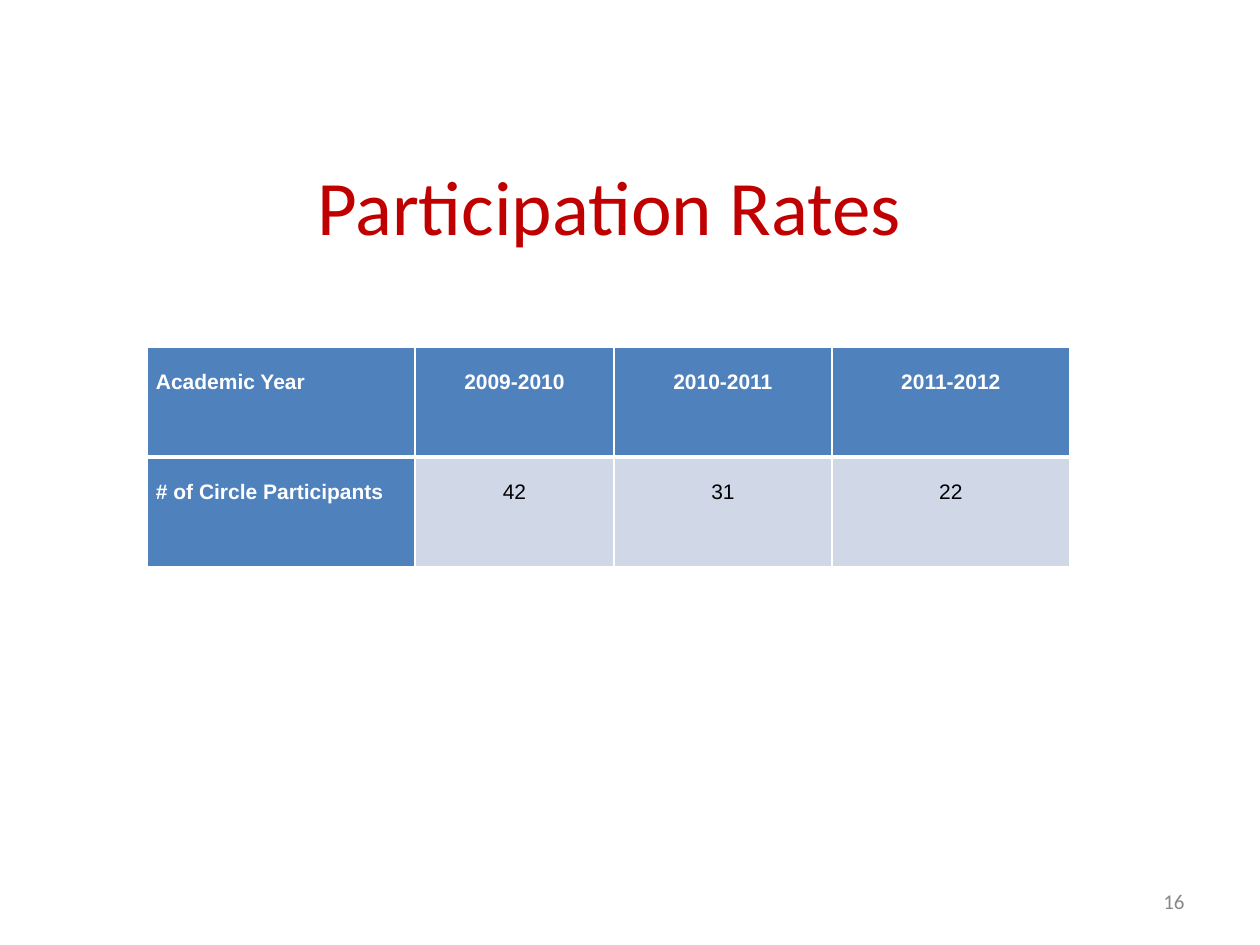
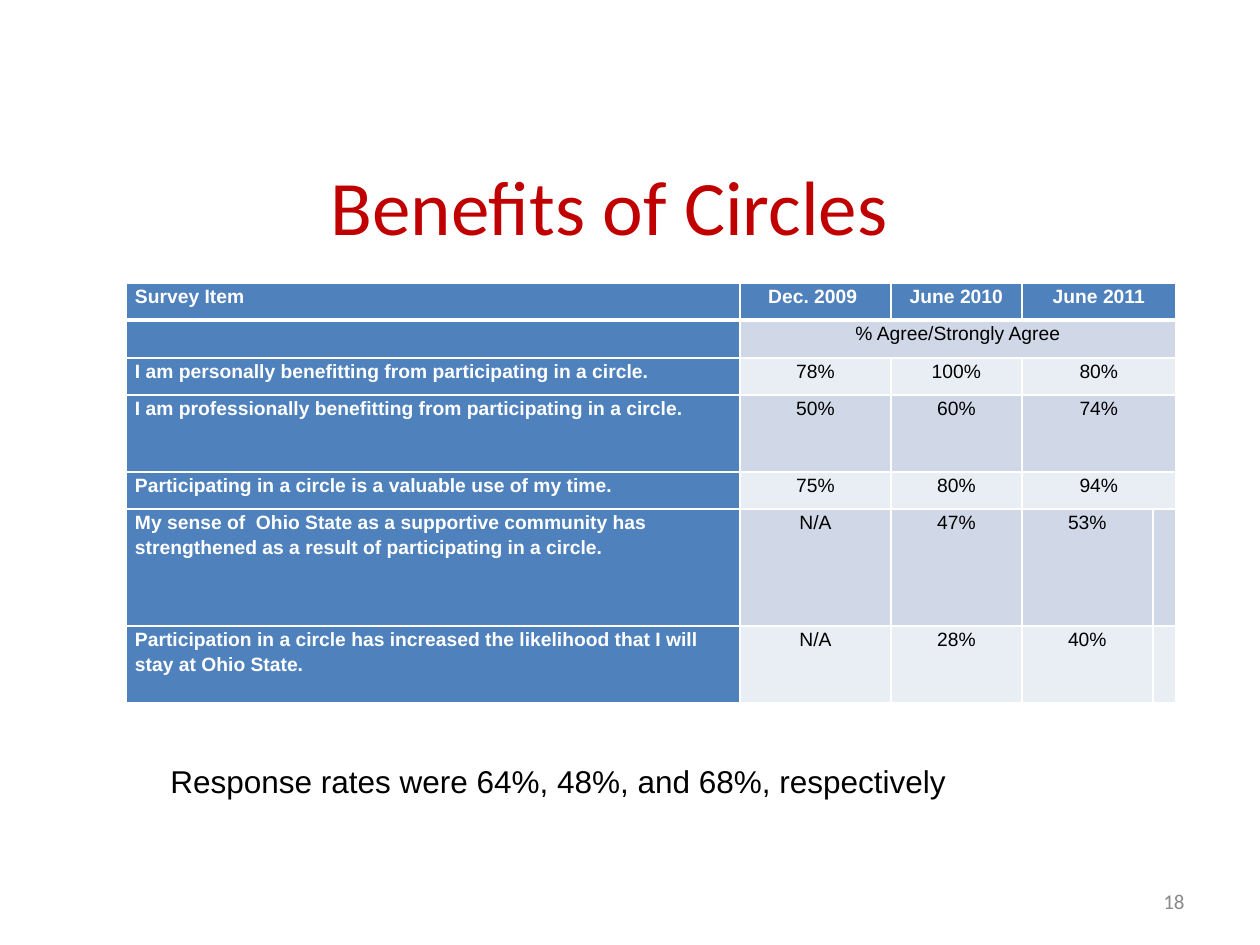
import lxml.etree
import pptx
import pptx.dml.color
import pptx.enum.text
import pptx.oxml.ns
import pptx.util

COLORS = {
    "title": "C00000",
    "header": "4F81BD",
    "band_dark": "D0D8E8",
    "band_light": "E9EDF4",
    "white": "FFFFFF",
    "black": "000000",
    "number": "898989",
}
PAGE_SIZE = (1260, 945)
TITLE_AREA = (116, 168, 987, 73)
NUMBER_AREA = (903, 876, 294, 50)

PAGES = [
    {
        "title": "Participation Rates",
        "number": "16",
        "table": {
            "origin": (147, 347),
            "columns": [268, 199, 218, 238],
            "heights": [110, 110],
            "format": {"size": 12, "line_spacing": 2.0},
            "rows": [
                ["Academic Year", "2009-2010", "2010-2011", "2011-2012"],
                ["# of Circle Participants", "42", "31", "22"],
            ],
        },
    },
    {
        "title": "Benefits of Circles",
        "number": "18",
        "table": {
            "origin": (126, 283),
            "columns": [614, 151, 131, 131, 23],
            "heights": [37, 38, 37, 77, 37, 117, 77],
            "format": {"size": 11, "line_spacing": 1.15, "after": 10},
            "rows": [
                ["Survey Item", "Dec. 2009 ", "June 2010", "June 2011"],
                ["", "% Agree/Strongly Agree"],
                ["I am personally benefitting from participating in a circle.", "78%", "100%", "80%"],
                ["I am professionally benefitting from participating in a circle.", "50%", "60%", "74%"],
                ["Participating in a circle is a valuable use of my time.", "75%", "80%", "94%"],
                ["My sense of  Ohio State as a supportive community has strengthened "
                 "as a result of participating in a circle.", "N/A", "47%", "53%", ""],
                ["Participation in a circle has increased the likelihood that I will "
                 "stay at Ohio State.", "N/A", "28%", "40%", ""],
            ],
        },
        "note": {
            "text": "Response rates were 64%, 48%, and 68%, respectively",
            "area": (158, 756, 808, 50),
        },
    },
]


def px(length):
    return pptx.util.Emu(round(length * 914400 / 126))


def rgb(name):
    return pptx.dml.color.RGBColor.from_string(COLORS[name])


def write(frame, text, size, color="black", font="Arial", bold=False,
          align="LEFT", line_spacing=None, after=None):
    para = frame.paragraphs[0]
    para.alignment = getattr(pptx.enum.text.PP_ALIGN, align)
    if line_spacing:
        para.line_spacing = line_spacing
    if after:
        para.space_after = pptx.util.Pt(after)
    if not text:
        para._p.get_or_add_endParaRPr().set("sz", str(size * 100))
        return
    span = para.add_run()
    span.text = text
    span.font.size = pptx.util.Pt(size)
    span.font.name = font
    span.font.bold = bold
    span.font.color.rgb = rgb(color)


def set_borders(cell, widths):
    properties = cell._tc.get_or_add_tcPr()
    for position, (side, width) in enumerate(widths.items()):
        line = lxml.etree.Element(pptx.oxml.ns.qn("a:ln" + side), w=str(pptx.util.Pt(width)))
        fill = lxml.etree.SubElement(line, pptx.oxml.ns.qn("a:solidFill"))
        lxml.etree.SubElement(fill, pptx.oxml.ns.qn("a:srgbClr"), val=COLORS["white"])
        properties.insert(position, line)


def add_title(page, text):
    title = page.shapes.title
    title.left, title.top, title.width, title.height = map(px, TITLE_AREA)
    frame = title.text_frame
    frame.auto_size = pptx.enum.text.MSO_AUTO_SIZE.NONE
    frame.vertical_anchor = pptx.enum.text.MSO_ANCHOR.MIDDLE
    write(frame, text, 44, color="title", font="Calibri", align="CENTER")


def add_number(page, text):
    frame = page.shapes.add_textbox(*map(px, NUMBER_AREA)).text_frame
    frame.word_wrap = True
    frame.vertical_anchor = pptx.enum.text.MSO_ANCHOR.MIDDLE
    write(frame, text, 12, color="number", font="Calibri", align="RIGHT")


def add_note(page, text, area):
    frame = page.shapes.add_textbox(*map(px, area)).text_frame
    frame.word_wrap = False
    frame.auto_size = pptx.enum.text.MSO_AUTO_SIZE.SHAPE_TO_FIT_TEXT
    write(frame, text, 18)


def add_table(page, origin, columns, heights, format, rows):
    size = (sum(columns), sum(heights))
    table = page.shapes.add_table(len(rows), len(columns), *map(px, origin + size)).table
    for column, width in zip(table.columns, columns):
        column.width = px(width)
    for row, height in zip(table.rows, heights):
        row.height = px(height)
    last = len(columns) - 1
    for r, values in enumerate(rows):
        if len(values) <= last:
            table.cell(r, len(values) - 1).merge(table.cell(r, last))
        for c in range(len(columns)):
            cell = table.cell(r, c)
            heading = r == 0 or c == 0
            band = "band_dark" if r % 2 else "band_light"
            cell.fill.solid()
            cell.fill.fore_color.rgb = rgb("header" if heading else band)
            cell.margin_left = cell.margin_right = px(9)
            cell.margin_top = cell.margin_bottom = 0
            set_borders(cell, {"L": 1, "R": 1, "T": 3 if r == 1 else 1, "B": 3 if r == 0 else 1})
            write(cell.text_frame, values[c] if c < len(values) else "",
                  color="white" if heading else "black", bold=heading,
                  align="CENTER" if c else "LEFT", **format)


def main():
    deck = pptx.Presentation()
    deck.slide_width, deck.slide_height = map(px, PAGE_SIZE)
    for content in PAGES:
        page = deck.slides.add_slide(deck.slide_layouts[5])
        add_table(page, **content["table"])
        add_title(page, content["title"])
        add_number(page, content["number"])
        if "note" in content:
            add_note(page, **content["note"])
    deck.save("out.pptx")


if __name__ == "__main__":
    main()
